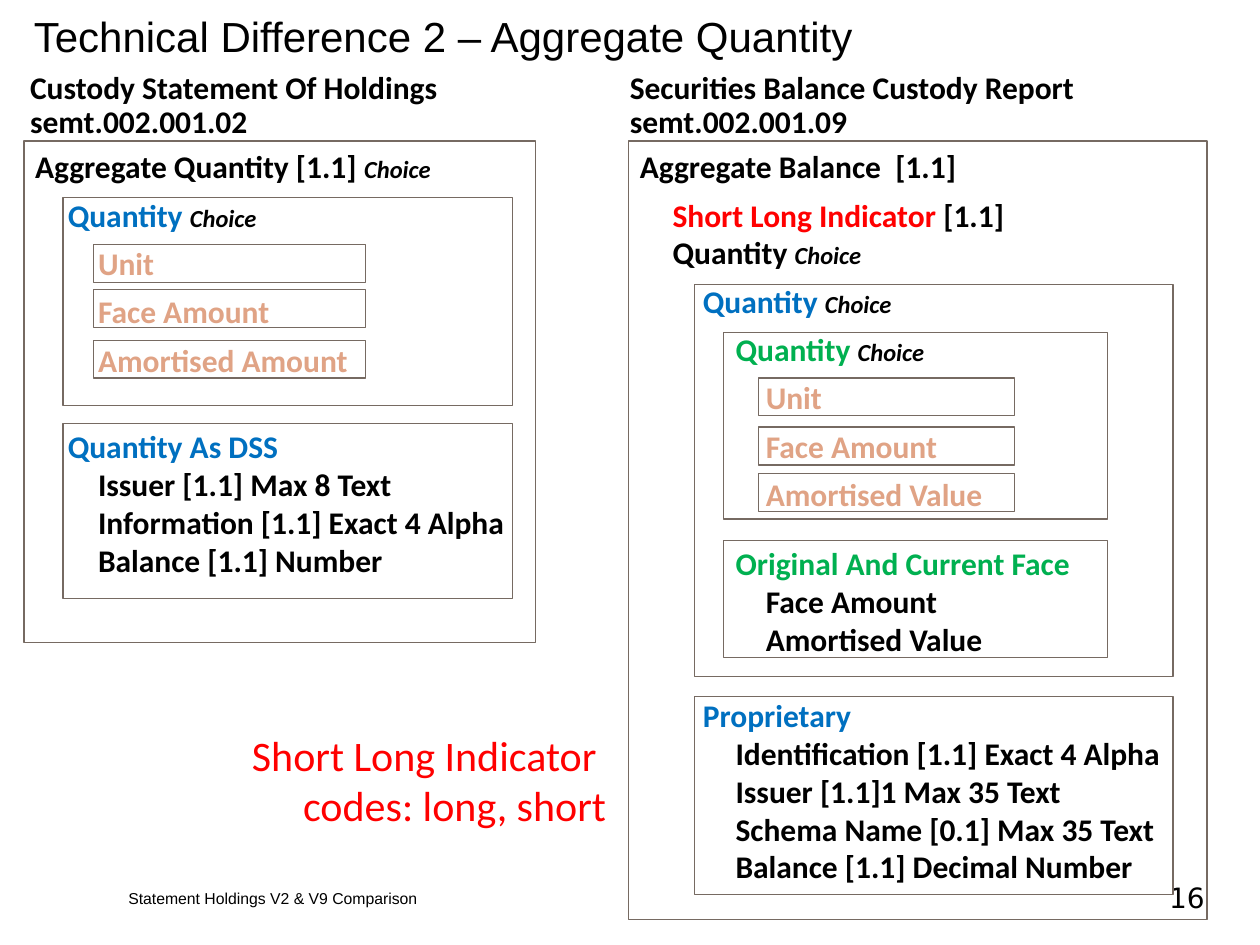
from pptx import Presentation
from pptx.dml.color import RGBColor
from pptx.enum.shapes import MSO_SHAPE as Shape
from pptx.enum.text import MSO_ANCHOR as Anchor, PP_ALIGN as Align
from pptx.util import Inches, Pt

COLORS = {
    "black": "000000",
    "red": "FF0000",
    "blue": "0070C0",
    "green": "00B050",
    "peach": "E0A385",
    "frame": "766A62",
}
INDENTS = [0, 0.26, 0.5, 0.76, 1]  # one left margin per message level


def color(name):
    return RGBColor.from_string(COLORS[name])


def add_frame(page, left, top, width, height):
    frame = page.shapes.add_shape(
        Shape.RECTANGLE, Inches(left), Inches(top), Inches(width), Inches(height))
    frame.shadow.inherit = False
    frame.fill.background()
    frame.line.color.rgb = color("frame")
    frame.line.width = Pt(0.75)


def add_box(page, left, top, width, height, anchor=Anchor.TOP, wrap=True):
    box = page.shapes.add_textbox(
        Inches(left), Inches(top), Inches(width), Inches(height))
    box.text_frame.word_wrap = wrap
    box.text_frame.vertical_anchor = anchor
    return box.text_frame


def add_span(para, text, size=18, font="Calibri", fill="black",
             bold=False, italic=False):
    span = para.add_run()
    span.text = text
    span.font.size = Pt(size)
    span.font.name = font
    span.font.bold = bold
    span.font.italic = italic
    span.font.color.rgb = color(fill)


def add_text(page, place, lines, align=Align.LEFT, spacing=None,
             anchor=Anchor.TOP, wrap=True, **style):
    """Add a text box whose lines share one format."""
    frame = add_box(page, *place, anchor=anchor, wrap=wrap)
    for number, line in enumerate(lines):
        para = frame.add_paragraph() if number else frame.paragraphs[0]
        para.alignment = align
        para.line_spacing = spacing
        add_span(para, line, **style)


def add_message(page, place, lines):
    """Add an indented outline: (level, spans, space before, space after)."""
    frame = add_box(page, *place)
    for number, (level, spans, before, after) in enumerate(lines):
        para = frame.add_paragraph() if number else frame.paragraphs[0]
        margins = para._p.get_or_add_pPr()
        margins.set("marL", str(Inches(INDENTS[level])))
        margins.set("indent", "0")
        para.space_before = Pt(before)
        para.space_after = Pt(after)
        for text, style in spans:
            add_span(para, text, bold=True, **style)


def line(level, text, fill="black", choice=False, before=0, after=0, tail=""):
    spans = [(text, {"fill": fill})]
    if choice:
        spans.append(("Choice", {"size": 14, "italic": True}))
    if tail:
        spans.append((tail, {}))
    return level, spans, before, after


def main():
    deck = Presentation()
    deck.slide_width, deck.slide_height = Inches(10), Inches(7.5)
    page = deck.slides.add_slide(deck.slide_layouts[6])

    # Title and footer
    add_text(page, (0.17, 0, 9.73, 0.56),
             ["Technical Difference 2 – Aggregate Quantity"],
             anchor=Anchor.MIDDLE, size=24, font="Arial")
    add_text(page, (0.92, 7, 6.21, 0.25), ["Statement Holdings V2 & V9 Comparison"],
             anchor=Anchor.MIDDLE, size=9, font="Arial")
    add_text(page, (8.83, 7, 0.83, 0.25), ["16"], align=Align.RIGHT,
             anchor=Anchor.MIDDLE, size=16, font="DejaVu Sans")

    # Message headings
    for place, name, code in [
        ((0.14, 0.53, 3.46, 0.63), "Custody Statement Of Holdings", "semt.002.001.02"),
        ((4.9, 0.53, 3.76, 0.63), "Securities Balance Custody Report", "semt.002.001.09"),
    ]:
        add_text(page, place, [name, code], spacing=Pt(19), wrap=False, bold=True)

    # Frames of the old message, outermost first
    add_frame(page, 0.19, 1.12, 4.06, 3.98)
    for top, height in [(1.57, 1.65), (3.36, 1.39)]:
        add_frame(page, 0.5, top, 3.57, height)
    for top in [1.94, 2.3, 2.7]:
        add_frame(page, 0.74, top, 2.16, 0.3)

    # Frames of the new message, outermost first
    add_frame(page, 4.99, 1.12, 4.59, 6.18)
    for top, height in [(2.26, 3.11), (5.53, 1.57)]:
        add_frame(page, 5.51, top, 3.8, height)
    for top, height in [(2.64, 1.48), (4.29, 0.93)]:
        add_frame(page, 5.74, top, 3.05, height)
    for top in [3, 3.39, 3.76]:
        add_frame(page, 6.02, top, 2.03, 0.3)

    # Old message
    add_message(page, (0.18, 1.12, 4.24, 3.55), [
        line(0, "Aggregate Quantity [1.1] ", choice=True, after=6),
        line(1, "Quantity ", "blue", choice=True, after=6),
        line(2, "Unit", "peach", after=6),
        line(2, "Face Amount", "peach", after=6),
        line(2, "Amortised Amount", "peach", after=6),
        line(1, "Quantity As DSS", "blue", before=22),
        line(2, "Issuer [1.1] Max 8 Text"),
        line(2, "Information [1.1] Exact 4 Alpha"),
        line(2, "Balance [1.1] Number"),
    ])

    # New message
    add_message(page, (4.98, 1.12, 4.56, 6.01), [
        line(0, "Aggregate Balance  [1.1]", after=6),
        line(1, "Short Long Indicator ", "red", tail="[1.1]"),
        line(1, "Quantity ", choice=True, after=6),
        line(2, "Quantity ", "blue", choice=True, after=6),
        line(3, "Quantity ", "green", choice=True, after=6),
        line(4, "Unit", "peach", after=6),
        line(4, "Face Amount", "peach", after=6),
        line(4, "Amortised Value", "peach", after=6),
        line(3, "Original And Current Face", "green", before=12),
        line(4, "Face Amount"),
        line(4, "Amortised Value"),
        line(2, "Proprietary", "blue", before=22),
        line(3, "Identification [1.1] Exact 4 Alpha"),
        line(3, "Issuer [1.1]1 Max 35 Text"),
        line(3, "Schema Name [0.1] Max 35 Text"),
        line(3, "Balance [1.1] Decimal Number"),
    ])

    # Remark
    add_text(page, (0.38, 5.74, 4.53, 0.91),
             ["Short Long Indicator ", "codes: long, short"],
             align=Align.RIGHT, size=24, fill="red")

    deck.save("out.pptx")


if __name__ == "__main__":
    main()
